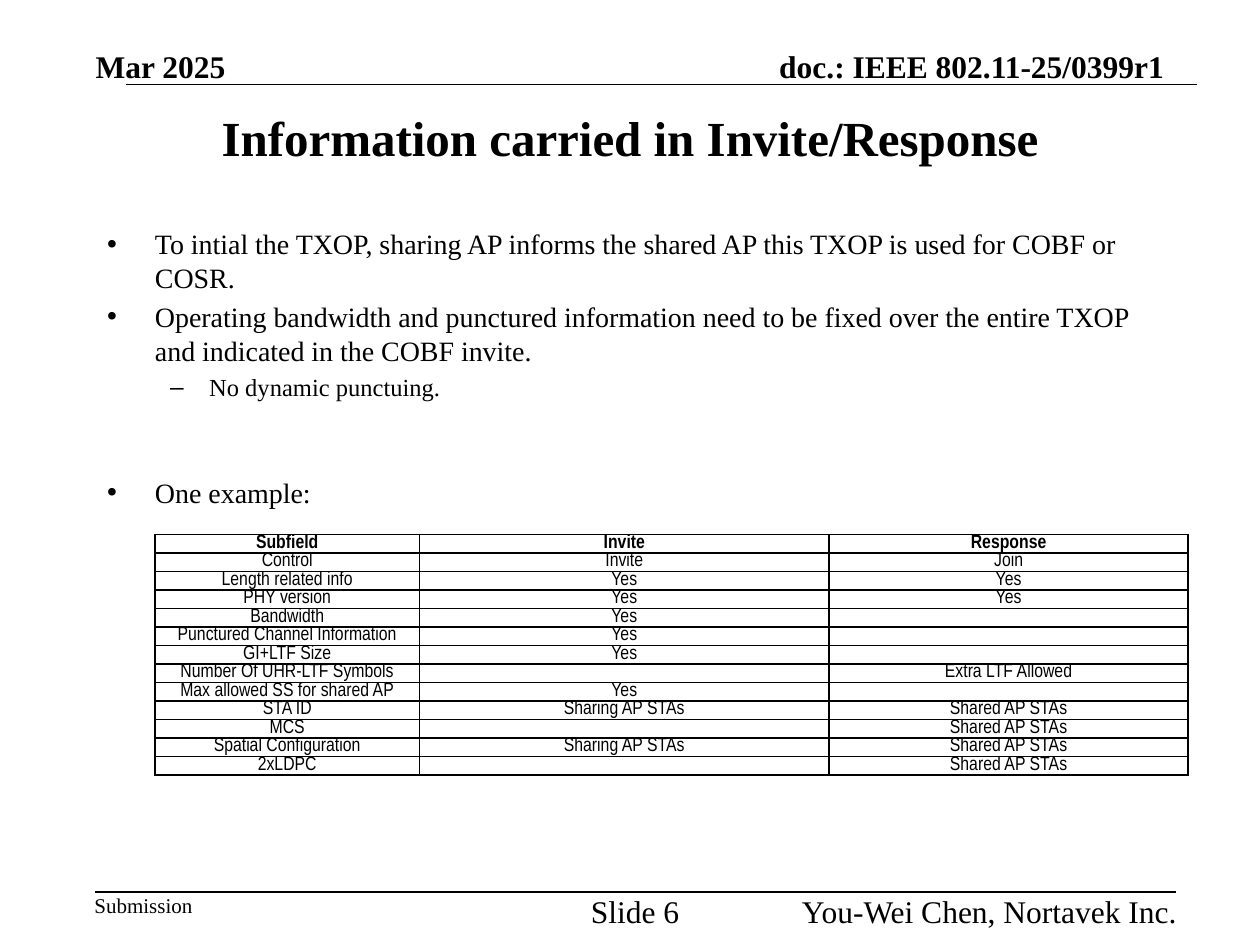
from dataclasses import dataclass

from lxml import etree
from pptx import Presentation
from pptx.dml.color import RGBColor
from pptx.enum.shapes import MSO_CONNECTOR
from pptx.enum.text import MSO_ANCHOR, MSO_AUTO_SIZE, PP_ALIGN
from pptx.oxml.ns import qn
from pptx.util import Emu, Inches, Pt

LEFT, CENTER, RIGHT = PP_ALIGN.LEFT, PP_ALIGN.CENTER, PP_ALIGN.RIGHT
TOP, MIDDLE, BOTTOM = MSO_ANCHOR.TOP, MSO_ANCHOR.MIDDLE, MSO_ANCHOR.BOTTOM
FIXED = MSO_AUTO_SIZE.NONE
STRAIGHT = MSO_CONNECTOR.STRAIGHT

COLORS = {"ink": "000000", "paper": "FFFFFF"}
SERIF, NARROW = "Times New Roman", "Arial Narrow"
MARGIN = 0.75
FOOTER_TOP = 7.08


@dataclass(frozen=True)
class Label:
    text: str
    left: float
    top: float
    width: float
    height: float
    size: int
    bold: bool = False
    align: PP_ALIGN = LEFT
    anchor: MSO_ANCHOR = TOP


@dataclass(frozen=True)
class Point:
    text: str
    level: int = 0
    before: float = 3.2


@dataclass(frozen=True)
class Bullet:
    char: str
    margin: float
    hang: float
    size: int


LABELS = [
    Label("Mar 2025", 0.76, 0.37, 1.1, 0.3, 18, True, LEFT, BOTTOM),
    Label("doc.: IEEE 802.11-25/0399r1", 5.64, 0.37, 3.6, 0.3, 18, True, RIGHT, BOTTOM),
    Label("Submission", MARGIN, FOOTER_TOP, 0.8, 0.2, 12),
    Label("Slide 6", 4.64, FOOTER_TOP, 0.8, 0.3, 18, align=CENTER),
    Label("You-Wei Chen, Nortavek Inc.", 6.24, FOOTER_TOP, 3.1, 0.3, 18, align=RIGHT),
]
RULES = [(1, 9.5, 0.67), (MARGIN, 9.33, FOOTER_TOP)]
BULLETS = [Bullet("•", 0.38, 0.38, 16), Bullet("–", 0.81, 0.31, 14)]
POINTS = [
    Point("To intial the TXOP, sharing AP informs the shared AP this TXOP is used "
          "for COBF or COSR.", before=0),
    Point("Operating bandwidth and punctured information need to be fixed over the "
          "entire TXOP and indicated in the COBF invite."),
    Point("No dynamic punctuing.", level=1),
    Point("One example:", before=42),
]
COLUMN_WIDTHS = [2.1, 3.25, 2.85]
TABLE_HEIGHT = 1.91
SUBFIELDS = [
    ("Subfield", "Invite", "Response"),
    ("Control", "Invite", "Join"),
    ("Length related info", "Yes", "Yes"),
    ("PHY version", "Yes", "Yes"),
    ("Bandwidth", "Yes", ""),
    ("Punctured Channel Information", "Yes", ""),
    ("GI+LTF Size", "Yes", ""),
    ("Number Of UHR-LTF Symbols", "", "Extra LTF Allowed"),
    ("Max allowed SS for shared AP", "Yes", ""),
    ("STA ID", "Sharing AP STAs", "Shared AP STAs"),
    ("MCS", "", "Shared AP STAs"),
    ("Spatial Configuration", "Sharing AP STAs", "Shared AP STAs"),
    ("2xLDPC", "", "Shared AP STAs"),
]


def write(paragraph, text: str, *, size: int, font: str = SERIF, bold: bool = False,
          align: PP_ALIGN = LEFT, before: float = 0, spacing: float = 1.0) -> None:
    paragraph.alignment = align
    paragraph.space_before = Pt(before)
    paragraph.line_spacing = spacing
    if not text:
        etree.SubElement(paragraph._p, qn("a:endParaRPr"), sz=str(size * 100))
        return
    run = paragraph.add_run()
    run.text = text
    run.font.size, run.font.name, run.font.bold = Pt(size), font, bold
    run.font.color.rgb = RGBColor.from_string(COLORS["ink"])


def place(shape, left: float, top: float, width: float, height: float) -> None:
    shape.left, shape.top = Inches(left), Inches(top)
    shape.width, shape.height = Inches(width), Inches(height)


def add_label(slide, label: Label) -> None:
    box = slide.shapes.add_textbox(*map(Inches, (label.left, label.top,
                                                 label.width, label.height)))
    frame = box.text_frame
    frame.margin_left = frame.margin_right = frame.margin_top = frame.margin_bottom = 0
    frame.word_wrap, frame.auto_size = True, FIXED
    frame.vertical_anchor = label.anchor
    write(frame.paragraphs[0], label.text, size=label.size, bold=label.bold,
          align=label.align)


def add_rule(slide, start: float, end: float, y: float) -> None:
    rule = slide.shapes.add_connector(STRAIGHT, *map(Inches, (start, y, end, y)))
    rule.line.color.rgb = RGBColor.from_string(COLORS["ink"])
    rule.line.width = Pt(1)
    etree.SubElement(rule._element.spPr, qn("a:effectLst"))


def add_point(paragraph, point: Point) -> None:
    bullet = BULLETS[point.level]
    paragraph.level = point.level
    properties = paragraph._p.get_or_add_pPr()
    properties.set("marL", str(Inches(bullet.margin)))
    properties.set("indent", str(-Inches(bullet.hang)))
    etree.SubElement(properties, qn("a:buChar"), char=bullet.char)
    write(paragraph, point.text, size=bullet.size, before=point.before)


def format_cell(cell, text: str, bold: bool) -> None:
    cell.margin_left = cell.margin_right = cell.margin_top = cell.margin_bottom = Emu(0)
    cell.vertical_anchor = MIDDLE
    properties = cell._tc.get_or_add_tcPr()
    for side in ("lnL", "lnR", "lnT", "lnB"):
        border = etree.SubElement(properties, qn(f"a:{side}"), w=str(Pt(1)))
        fill = etree.SubElement(border, qn("a:solidFill"))
        etree.SubElement(fill, qn("a:srgbClr"), val=COLORS["ink"])
    cell.fill.solid()
    cell.fill.fore_color.rgb = RGBColor.from_string(COLORS["paper"])
    # A small size keeps empty cells from stretching their row
    write(cell.text_frame.paragraphs[0], text, size=11 if text else 6, font=NARROW,
          bold=bold, align=CENTER, spacing=0.83)


def add_subfield_table(slide, left: float, top: float) -> None:
    table = slide.shapes.add_table(
        len(SUBFIELDS), len(COLUMN_WIDTHS), Inches(left), Inches(top),
        Inches(sum(COLUMN_WIDTHS)), Inches(TABLE_HEIGHT)).table
    table.first_row = table.horz_banding = False
    for column, width in zip(table.columns, COLUMN_WIDTHS):
        column.width = Inches(width)
    for index, (row, texts) in enumerate(zip(table.rows, SUBFIELDS)):
        row.height = Inches(TABLE_HEIGHT / len(SUBFIELDS))
        for cell, text in zip(row.cells, texts):
            format_cell(cell, text, bold=index == 0)


def main() -> None:
    deck = Presentation()
    deck.slide_width, deck.slide_height = Inches(10), Inches(7.5)
    slide = deck.slides.add_slide(deck.slide_layouts[1])

    # Header and footer
    for label in LABELS:
        add_label(slide, label)
    for rule in RULES:
        add_rule(slide, *rule)

    # Title
    title = slide.shapes.title
    place(title, MARGIN, 0.75, 8.5, 0.67)
    title.text_frame.vertical_anchor = MIDDLE
    title.text_frame.auto_size = FIXED
    write(title.text_frame.paragraphs[0], "Information carried in Invite/Response",
          size=28, bold=True, align=CENTER)

    # Bullet list
    body = slide.placeholders[1]
    place(body, MARGIN, 1.75, 8.5, 4.92)
    frame = body.text_frame
    frame.auto_size = FIXED
    for index, point in enumerate(POINTS):
        add_point(frame.add_paragraph() if index else frame.paragraphs[0], point)

    # Example table
    add_subfield_table(slide, 1.23, 4.24)
    deck.save("out.pptx")


if __name__ == "__main__":
    main()
